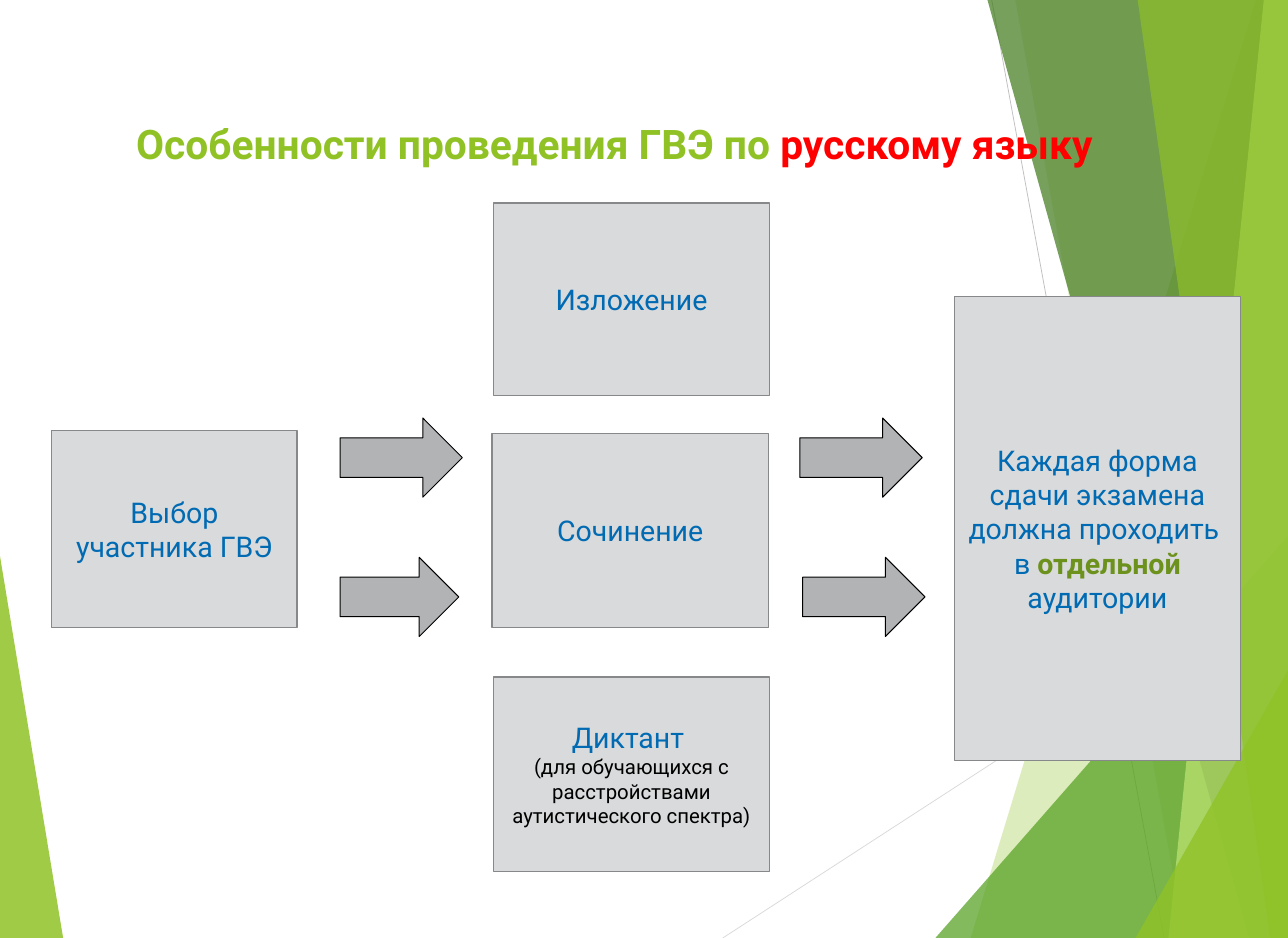
from lxml.etree import SubElement
from pptx import Presentation
from pptx.dml.color import RGBColor
from pptx.enum.shapes import MSO_CONNECTOR as CONN, MSO_SHAPE as SHAPE
from pptx.enum.text import MSO_ANCHOR as ANCHOR, PP_ALIGN as ALIGN
from pptx.oxml.ns import qn
from pptx.util import Inches, Pt

BLACK = RGBColor(0x00, 0x00, 0x00)
RED = RGBColor(0xFF, 0x00, 0x00)
LIME = RGBColor(0x90, 0xC2, 0x26)
GREEN = RGBColor(0x54, 0xA0, 0x21)
FOREST = RGBColor(0x3F, 0x78, 0x19)
PALE_LIME = RGBColor(0xC0, 0xE4, 0x74)
OLIVE = RGBColor(0x6C, 0x92, 0x1D)
BLUE = RGBColor(0x00, 0x6A, 0xB3)
CARD = RGBColor(0xD9, 0xDA, 0xDB)
CARD_LINE = RGBColor(0x87, 0x88, 0x8A)
ARROW = RGBColor(0xB1, 0xB3, 0xB4)
RAY_LIGHT = RGBColor(0xD9, 0xD9, 0xD9)
RAY_DARK = RGBColor(0xBF, 0xBF, 0xBF)

BODY = {"name": "Roboto", "size": Pt(28), "bold": False, "color": BLUE}
HEADING = BODY | {"size": Pt(40), "bold": True, "color": LIME}
NOTE = BODY | {"size": Pt(20), "color": BLACK}
STRONG = BODY | {"bold": True, "color": OLIVE}

RAYS = [(56.12, 100, 100, 60.91, RAY_LIGHT), (77, 0, 90.38, 100, RAY_DARK)]
FACETS = [
    (0, 0, 59.3, 4.9, LIME, 85),
    (100, 97.5, 0, 75.36, LIME, 30),
    (100, 78.83, 0, 91.97, LIME, 20),
    (100, 100, 57.15, 72.62, GREEN, 72),
    (100, 76.67, 0, 96.98, FOREST, 70),
    (100, 98.12, 0, 90.72, PALE_LIME, 70),
    (100, 88.33, 0, 98.63, LIME, 65),
    (100, 100, 71.5, 88.16, LIME, 80),
]


def point(box, x, y):
    left, top, width, height = box
    return int(left + width * x / 100), int(top + height * y / 100)


def area(box, x, y, w, h):
    return *point(box, x, y), *point((0, 0, *box[2:]), w, h)


def write(p, runs):
    for text, style in runs:
        if text == "\n":
            p.add_line_break()
            continue
        r = p.add_run()
        r.text = text
        for key, value in style.items():
            if key == "color":
                r.font.color.rgb = value
            else:
                setattr(r.font, key, value)


def paint(sp, fill, line, width):
    sp.shadow.inherit = False
    sp.fill.solid()
    sp.fill.fore_color.rgb = fill
    sp.line.color.rgb = line
    sp.line.width = Pt(width)


def add_card(s, box, *paragraphs):
    sp = s.shapes.add_shape(SHAPE.RECTANGLE, *box)
    paint(sp, CARD, CARD_LINE, 1.5)
    tf = sp.text_frame
    for key, value in {"word_wrap": True, "vertical_anchor": ANCHOR.MIDDLE}.items():
        setattr(tf, key, value)
    for i, runs in enumerate(paragraphs):
        p = tf.add_paragraph() if i else tf.paragraphs[0]
        p.alignment = ALIGN.CENTER
        write(p, runs)


def add_arrow(s, box):
    paint(s.shapes.add_shape(SHAPE.RIGHT_ARROW, *box), ARROW, BLACK, 1)


def add_ray(s, box, x1, y1, x2, y2, color):
    ray = s.shapes.add_connector(CONN.STRAIGHT, *point(box, x1, y1), *point(box, x2, y2))
    ray.line.color.rgb = color
    ray.line.width = Pt(0.75)
    SubElement(ray._element.spPr, qn("a:effectLst"))


def add_facet(s, box, edge, top_x, top_y, bottom_x, color, alpha):
    builder = s.shapes.build_freeform(*point(box, top_x, top_y))
    corners = [(bottom_x, 100), (edge, 100), (edge, top_y)]
    builder.add_line_segments([point(box, *corner) for corner in corners])
    sp = builder.convert_to_shape()
    sp.shadow.inherit = False
    sp.fill.solid()
    sp.fill.fore_color.rgb = color
    sp.line.fill.background()
    rgb = sp._element.spPr.find(qn("a:solidFill"))[0]
    SubElement(rgb, qn("a:alpha"), val=str(alpha * 1000))


def add_backdrop(s, box):
    add_facet(s, box, *FACETS[0])
    for ray in RAYS:
        add_ray(s, box, *ray)
    for facet in FACETS[1:]:
        add_facet(s, box, *facet)


def add_title(s, box):
    title = s.shapes.title
    for key, value in zip(("left", "top", "width", "height"), box):
        setattr(title, key, value)
    s.shapes._spTree.append(title._element)
    tf = title.text_frame
    for key, value in {"word_wrap": True, "vertical_anchor": ANCHOR.TOP}.items():
        setattr(tf, key, value)
    p = tf.paragraphs[0]
    p.alignment = ALIGN.LEFT
    write(p, [("Особенности проведения ГВЭ по ", HEADING),
              ("русскому языку", HEADING | {"color": RED})])


def add_flow(s, box):
    add_card(s, area(box, 4, 45.9, 19.07, 21.03), [("Выбор участника ГВЭ", BODY)])
    for x, y, w in [(26.4, 44.57, 9.5), (26.4, 59.42, 9.22),
                    (62.1, 44.57, 9.5), (62.32, 59.42, 9.5)]:
        add_arrow(s, area(box, x, y, w, 8.44))
    forms = [
        (38.3, 21.66, 20.5, [[("Изложение", BODY)]]),
        (38.2, 46.2, 20.72, [[("Сочинение", BODY)]]),
        (38.3, 72.17, 20.72, [
            [("Диктант ", BODY)],
            [("(для обучающихся с расстройствами аутистического спектра)", NOTE)],
        ]),
    ]
    for x, y, h, paragraphs in forms:
        add_card(s, area(box, x, y, 21.46, h), *paragraphs)
    add_card(s, area(box, 74.1, 31.6, 22.2, 49.5), [
        ("Каждая форма сдачи экзамена должна проходить ", BODY), ("\n", BODY),
        ("в ", BODY), ("отдельной", STRONG), (" аудитории", BODY)])


def main():
    prs = Presentation()
    prs.slide_width, prs.slide_height = Inches(17.57), Inches(12.79)
    s = prs.slides.add_slide(prs.slide_layouts[5])
    page = (0, 0, prs.slide_width, prs.slide_height)
    add_backdrop(s, page)
    add_title(s, area(page, 10, 12.28, 90, 16.65))
    add_flow(s, page)
    prs.save("out.pptx")


if __name__ == "__main__":
    main()
